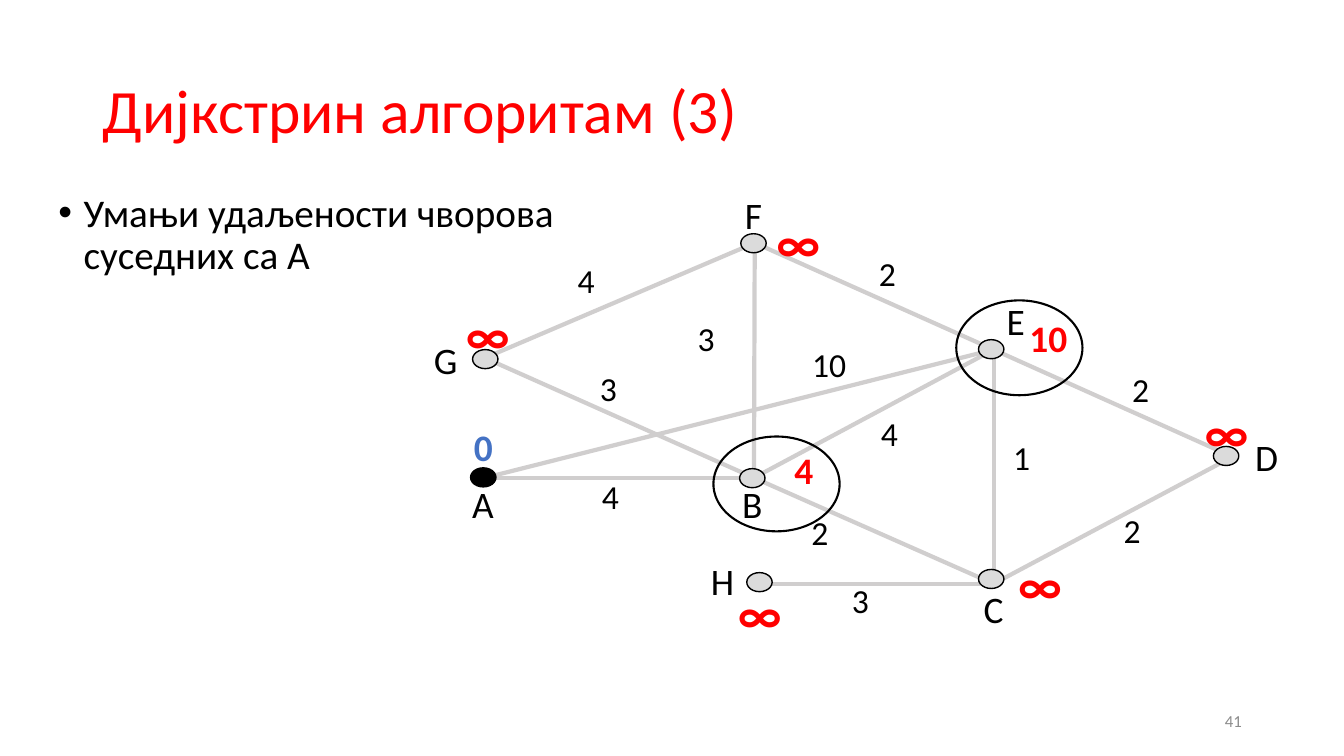
import lxml.etree
import pptx
import pptx.dml.color
import pptx.enum.shapes
import pptx.enum.text
import pptx.oxml.ns
import pptx.util

Cm = pptx.util.Cm
Align = pptx.enum.text.PP_ALIGN
Anchor = pptx.enum.text.MSO_ANCHOR
OVAL = pptx.enum.shapes.MSO_SHAPE.OVAL
STRAIGHT = pptx.enum.shapes.MSO_CONNECTOR.STRAIGHT

theme = {
    "font": "Calibri",
    "red": "FF0000",
    "black": "000000",
    "blue": "4472C4",
    "edge": "D0CECE",
    "node": "DBDBDB",
    "number": "8C8C8C",
    "title_size": 44,
    "body_size": 28,
    "name_size": 26.7,
    "weight_size": 24,
    "infinity_size": 37.3,
    "number_size": 12,
}

nodes = {
    "A": {"joint": (12.22, 12.04), "oval": (11.86, 11.79), "name": (12.17, 11.99),
          "distance": "0", "distance_at": (12.18, 10.57)},
    "B": {"joint": (19, 12.04), "oval": (18.64, 11.81), "name": (18.96, 11.99),
          "distance": "4", "distance_at": (20.26, 11.15)},
    "C": {"joint": (25.04, 14.71), "oval": (24.66, 14.35), "name": (25.04, 14.63),
          "distance": "∞", "distance_at": (26.21, 13.79)},
    "D": {"joint": (31.06, 11.51), "oval": (30.58, 11.25), "name": (31.92, 10.8),
          "distance": "∞", "distance_at": (30.91, 9.96)},
    "E": {"joint": (25.04, 8.81), "oval": (24.66, 8.56), "name": (25.6, 7.37),
          "distance": "10", "distance_at": (26.42, 7.8)},
    "F": {"joint": (19.02, 6.12), "oval": (18.67, 5.89), "name": (18.99, 4.7),
          "distance": "∞", "distance_at": (20.12, 5.18)},
    "G": {"joint": (12.22, 9.02), "oval": (11.91, 8.81), "name": (11.23, 8.36),
          "distance": "∞", "distance_at": (12.29, 7.49)},
    "H": {"joint": (19, 14.71), "oval": (18.82, 14.43), "name": (18.21, 13.94),
          "distance": "∞", "distance_at": (19.15, 14.53)},
}

edges = [
    ("A", "B", "4", 14.99, 11.99),
    ("B", "C", "2", 20.27, 12.9),
    ("C", "E", "1", 25.35, 11),
    ("B", "E", "4", 22.02, 10.41),
    ("A", "E", "10", 20.29, 8.66),
    ("B", "F", "3", 17.4, 8),
    ("B", "G", "3", 14.94, 9.27),
    ("G", "F", "4", 14.38, 6.55),
    ("F", "E", "2", 21.97, 6.38),
    ("E", "D", "2", 28.35, 9.3),
    ("C", "D", "2", 28.14, 12.85),
    ("C", "H", "3", 21.29, 14.61),
]

rings = [(24.1, 7.57), (17.98, 11)]

deck = pptx.Presentation()
deck.slide_width = Cm(33.87)
deck.slide_height = Cm(19.05)
page = deck.slides.add_slide(deck.slide_layouts[6])


def add_text(text, left, top, width, height, *, size, color=theme["black"], bold=False,
             align=Align.LEFT, anchor=Anchor.TOP, wrap=False, margins=(0.25, 0.13), spacing=1):
    box = page.shapes.add_textbox(Cm(left), Cm(top), Cm(width), Cm(height))
    frame = box.text_frame
    frame.word_wrap = wrap
    frame.vertical_anchor = anchor
    frame.margin_left = frame.margin_right = Cm(margins[0])
    frame.margin_top = frame.margin_bottom = Cm(margins[1])
    para = frame.paragraphs[0]
    para.text = text
    para.alignment = align
    para.line_spacing = spacing
    for span in para.runs:
        span.font.name = theme["font"]
        span.font.size = pptx.util.Pt(size)
        span.font.bold = bold
        span.font.color.rgb = pptx.dml.color.RGBColor.from_string(color)
    return para


def add_oval(left, top, width, height, line_width, fill=None):
    oval = page.shapes.add_shape(OVAL, Cm(left), Cm(top), Cm(width), Cm(height))
    oval.shadow.inherit = False
    oval.line.color.rgb = pptx.dml.color.RGBColor.from_string(theme["black"])
    oval.line.width = pptx.util.Pt(line_width)
    if fill:
        oval.fill.solid()
        oval.fill.fore_color.rgb = pptx.dml.color.RGBColor.from_string(fill)
    else:
        oval.fill.background()


add_text("Дијкстрин алгоритам (3)", 2.34, 1.02, 29.21, 3.68, size=theme["title_size"],
         color=theme["red"], anchor=Anchor.MIDDLE, wrap=True, spacing=0.9)

body = add_text("Умањи удаљености чворова \nсуседних са А", 1.22, 4.75, 29.21, 12.09,
                size=theme["body_size"], wrap=True, spacing=0.9)
body.space_before = pptx.util.Pt(10)
body_format = body._p.get_or_add_pPr()
body_format.set("marL", str(Cm(0.64)))
body_format.set("indent", str(Cm(-0.64)))
bullet_font = lxml.etree.SubElement(body_format, pptx.oxml.ns.qn("a:buFont"))
bullet_font.set("typeface", "Arial")
bullet = lxml.etree.SubElement(body_format, pptx.oxml.ns.qn("a:buChar"))
bullet.set("char", "•")

for start, end, weight, left, top in edges:
    ends = [Cm(value) for name in (start, end) for value in nodes[name]["joint"]]
    edge = page.shapes.add_connector(STRAIGHT, *ends)
    edge.line.color.rgb = pptx.dml.color.RGBColor.from_string(theme["edge"])
    edge.line.width = pptx.util.Pt(3)
    lxml.etree.SubElement(edge._element.spPr, pptx.oxml.ns.qn("a:effectLst"))

for name, node in nodes.items():
    add_oval(*node["oval"], 0.64, 0.48, 1, theme["black"] if name == "A" else theme["node"])

for name, node in nodes.items():
    center, top = node["name"]
    add_text(name, center - 0.55, top, 1.1, 1.4, size=theme["name_size"],
             align=Align.CENTER, anchor=Anchor.MIDDLE)

for start, end, weight, left, top in edges:
    add_text(weight, left, top, 0.26 + 0.5 * len(weight), 1.02,
             size=theme["weight_size"], margins=(0.18, 0))

for name, node in nodes.items():
    distance = node["distance"]
    center, top = node["distance_at"]
    if distance == "∞":
        width, height, size = 1.63, 1.85, theme["infinity_size"]
    else:
        width, height, size = 0.51 + 0.48 * len(distance), 1.4, theme["name_size"]
    add_text(distance, center - width / 2, top, width, height, size=size, bold=True,
             color=theme["blue"] if name == "A" else theme["red"], align=Align.CENTER)

for left, top in rings:
    add_oval(left, top, 3.18, 2.39, 1.5)

add_text("41", 23.93, 17.65, 7.62, 1.02, size=theme["number_size"], color=theme["number"],
         align=Align.RIGHT, anchor=Anchor.MIDDLE, wrap=True)

deck.save("out.pptx")
